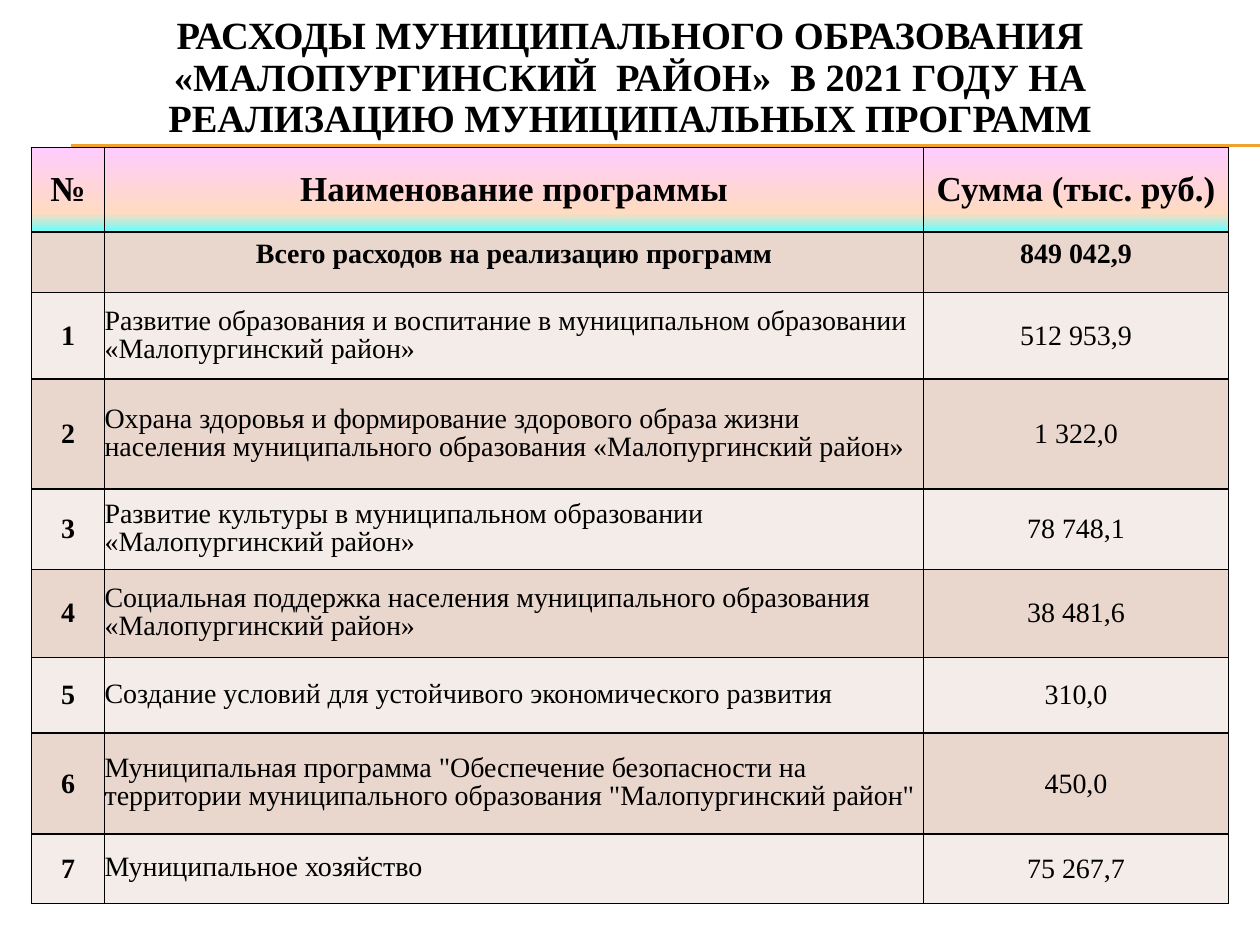
from copy import deepcopy

from lxml.etree import SubElement
from pptx import Presentation
from pptx.dml.color import RGBColor
from pptx.enum.shapes import MSO_CONNECTOR
from pptx.enum.text import MSO_ANCHOR, PP_ALIGN
from pptx.oxml.ns import qn
from pptx.util import Inches, Pt

BLACK = RGBColor(0x00, 0x00, 0x00)
GOLD = RGBColor(0xF0, 0xA2, 0x2E)
BANDS = (RGBColor(0xE9, 0xD6, 0xCD), RGBColor(0xF4, 0xEC, 0xE8))
FADE = ((0, RGBColor(0xFF, 0xCC, 0xFF)),
        (0.78, RGBColor(0xFF, 0xDB, 0xC0)),
        (1, RGBColor(0x66, 0xFF, 0xFF)))

TITLE = ("РАСХОДЫ МУНИЦИПАЛЬНОГО ОБРАЗОВАНИЯ «МАЛОПУРГИНСКИЙ  РАЙОН»  "
         "В 2021 ГОДУ НА РЕАЛИЗАЦИЮ МУНИЦИПАЛЬНЫХ ПРОГРАММ")
HEAD = ("№", "Наименование программы", "Сумма (тыс. руб.)")
TOTAL = ("", "Всего расходов на реализацию программ", "849 042,9")
ITEMS = (
    ("Развитие образования и воспитание в муниципальном образовании "
     "«Малопургинский район»", "512 953,9"),
    ("Охрана здоровья и формирование здорового образа жизни населения "
     "муниципального образования «Малопургинский район»", "1 322,0"),
    ("Развитие культуры в муниципальном образовании "
     "«Малопургинский район»", "78 748,1"),
    ("Социальная поддержка населения муниципального образования "
     "«Малопургинский район»", "38 481,6"),
    ("Создание условий для устойчивого экономического развития", "310,0"),
    ('Муниципальная программа "Обеспечение безопасности на территории '
     'муниципального образования "Малопургинский район"', "450,0"),
    ("Муниципальное хозяйство", "75 267,7"),
)
COLS = (0.58, 6.5, 2.42)
ROWS = (0.67, 0.48, 0.69, 0.87, 0.64, 0.7, 0.6, 0.8, 0.55)


class Deck:
    font = "Times New Roman"
    wide, high = 10, 7.5

    def __init__(self):
        self.prs = Presentation()
        self.prs.slide_width = Inches(self.wide)
        self.prs.slide_height = Inches(self.high)
        self.slide = self.prs.slides.add_slide(self.prs.slide_layouts[6])

    def label(self, frame, text, size, bold=False,
              align=PP_ALIGN.CENTER, space=None):
        para = frame.paragraphs[0]
        para.alignment = align
        para.line_spacing = space
        run = para.add_run()
        run.text = text
        font = run.font
        font.name, font.size, font.bold = self.font, Pt(size), bold
        font.color.rgb = BLACK

    def rule(self, left, top):
        """Thin line from left to the right edge of the slide."""
        line = self.slide.shapes.add_connector(
            MSO_CONNECTOR.STRAIGHT, Inches(left), Inches(top),
            Inches(self.wide), Inches(top))
        line.line.color.rgb = GOLD
        line.line.width = Pt(0.75)
        SubElement(line._element.spPr, qn("a:effectLst"))

    def title(self, text, left, top, width, height):
        box = self.slide.shapes.add_textbox(
            *map(Inches, (left, top, width, height)))
        frame = box.text_frame
        frame.word_wrap = True
        frame.vertical_anchor = MSO_ANCHOR.MIDDLE
        self.label(frame, text, 22, True, space=0.9)

    def grid(self, left, top, cols, rows):
        """Empty table with the given column widths and row heights."""
        table = self.slide.shapes.add_table(
            len(rows), len(cols), Inches(left), Inches(top),
            Inches(sum(cols)), Inches(sum(rows))).table
        for col, width in zip(table.columns, cols):
            col.width = Inches(width)
        for row, height in zip(table.rows, rows):
            row.height = Inches(height)
        return table

    def border(self, cell):
        props = cell._tc.get_or_add_tcPr()
        for side in ("lnL", "lnR", "lnT", "lnB"):
            line = SubElement(props, qn(f"a:{side}"), w=str(Pt(1)))
            fill = SubElement(line, qn("a:solidFill"))
            SubElement(fill, qn("a:srgbClr"), val=str(BLACK))

    def fade(self, cell):
        """Three-stop gradient from top to bottom."""
        fill = cell.fill
        fill.gradient()
        fill.gradient_angle = 270
        last = fill._fill._gradFill.gsLst[-1]
        last.addnext(deepcopy(last))
        for stop, (place, color) in zip(fill.gradient_stops, FADE):
            stop.position = place
            stop.color.rgb = color

    def cell(self, cell, text, size, bold=False, fill=None,
             anchor=MSO_ANCHOR.MIDDLE, tight=False, **style):
        cell.vertical_anchor = anchor
        if tight:
            cell.margin_left = cell.margin_right = 0
            cell.margin_top = cell.margin_bottom = 0
        self.border(cell)
        if fill is None:
            self.fade(cell)
        else:
            cell.fill.solid()
            cell.fill.fore_color.rgb = fill
        if text:
            self.label(cell.text_frame, text, size, bold, **style)


def main():
    deck = Deck()

    # Double rule and title
    for top in (1.15, 1.16):
        deck.rule(0.56, top)
    deck.title(TITLE, 0.25, 0.25, 9.5, 0.75)

    # Table: header and total rows
    table = deck.grid(0.25, 1.17, COLS, ROWS)
    for col, (head, total) in enumerate(zip(HEAD, TOTAL)):
        deck.cell(table.cell(0, col), head, 20, True)
        deck.cell(table.cell(1, col), total, 16, True, BANDS[0],
                  MSO_ANCHOR.TOP)

    # Table: numbered programmes in alternating bands
    for num, (name, cost) in enumerate(ITEMS, 1):
        row, band = num + 1, BANDS[num % 2]
        last = num == len(ITEMS)
        deck.cell(table.cell(row, 0), str(num), 16, True, band)
        deck.cell(table.cell(row, 1), name, 16, fill=band, tight=True,
                  align=PP_ALIGN.JUSTIFY if last else PP_ALIGN.LEFT,
                  space=0.8 if last else 0.9)
        deck.cell(table.cell(row, 2), cost, 16, fill=band)

    deck.prs.save("out.pptx")


if __name__ == "__main__":
    main()
